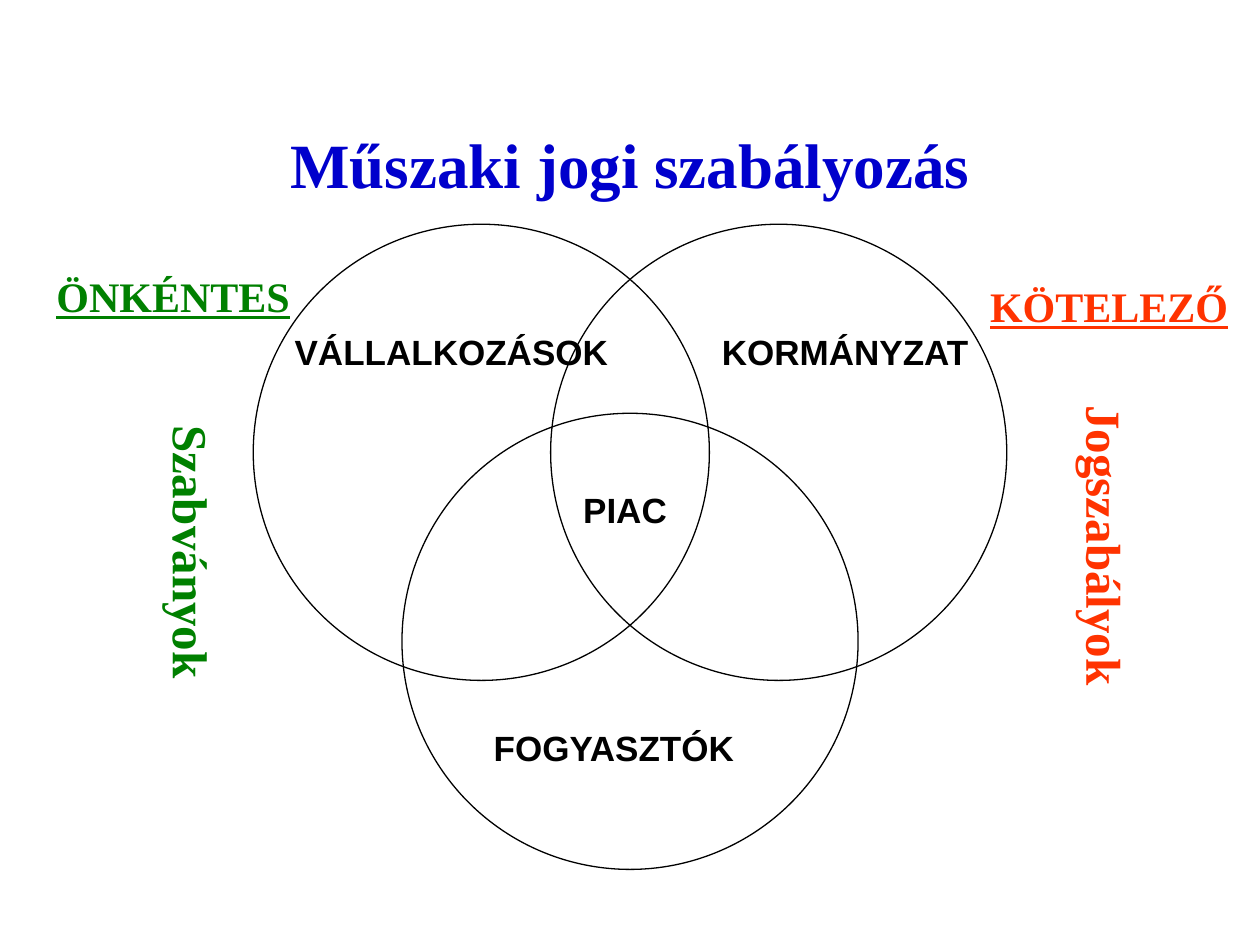
from dataclasses import dataclass

from pptx import Presentation
from pptx.dml.color import RGBColor
from pptx.enum.shapes import MSO_SHAPE as Shape
from pptx.enum.text import MSO_ANCHOR as Anchor, MSO_AUTO_SIZE as AutoSize, PP_ALIGN as Align
from pptx.util import Inches, Pt


@dataclass(frozen=True)
class Theme:
    """Colours, fonts and type sizes of the slide."""
    title_color: str = "0000CC"
    ink: str = "000000"
    voluntary: str = "008000"
    mandatory: str = "FF3300"
    serif: str = "Times New Roman"
    sans: str = "Arial"
    title_size: int = 36
    side_size: int = 28
    heading_size: int = 24
    label_size: int = 20
    line_width: float = 0.75


class SlideBuilder:
    """Draws styled elements on the current slide."""

    def __init__(self, slide, theme):
        self.slide = slide
        self.theme = theme

    def place(self, shape, left, top, width, height):
        shape.left, shape.top = Inches(left), Inches(top)
        shape.width, shape.height = Inches(width), Inches(height)

    def set_text(self, shape, text, name, size, color):
        paragraph = shape.text_frame.paragraphs[0]
        paragraph.text = text
        font = paragraph.font
        font.name, font.size, font.bold = name, Pt(size), True
        font.color.rgb = RGBColor.from_string(color)
        return paragraph

    def title(self, text, *box):
        shape = self.slide.shapes.title
        self.place(shape, *box)
        shape.text_frame.vertical_anchor = Anchor.MIDDLE
        paragraph = self.set_text(shape, text, self.theme.serif, self.theme.title_size,
                                  self.theme.title_color)
        paragraph.alignment = Align.CENTER

    def circle(self, left, top, diameter):
        size = Inches(diameter)
        shape = self.slide.shapes.add_shape(Shape.OVAL, Inches(left), Inches(top), size, size)
        shape.shadow.inherit = False
        shape.fill.background()
        shape.line.color.rgb = RGBColor.from_string(self.theme.ink)
        shape.line.width = Pt(self.theme.line_width)

    def text(self, text, box, name, size, color):
        shape = self.slide.shapes.add_textbox(*map(Inches, box))
        shape.text_frame.word_wrap = True
        shape.text_frame.auto_size = AutoSize.SHAPE_TO_FIT_TEXT
        self.set_text(shape, text, name, size, color)
        return shape

    def label(self, text, left, top, width):
        self.text(text, (left, top, width, 0.43), self.theme.sans,
                  self.theme.label_size, self.theme.ink)

    def side_text(self, text, left, top, height, color):
        shape = self.text(text, (left, top, 0.67, height), self.theme.serif,
                          self.theme.side_size, color)
        shape.text_frame._txBody.bodyPr.set("vert", "eaVert")

    def heading(self, text, left, top, width, color):
        shape = self.text(text, (left, top, width, 0.5), self.theme.serif,
                          self.theme.heading_size, color)
        shape.text_frame.paragraphs[0].font.underline = True


def main():
    presentation = Presentation()
    presentation.slide_width, presentation.slide_height = Inches(10), Inches(7.5)
    theme = Theme()
    slide = presentation.slides.add_slide(presentation.slide_layouts[5])
    builder = SlideBuilder(slide, theme)

    builder.title("Műszaki jogi szabályozás", 0.75, 0.67, 8.5, 1.25)
    for left, top in ((2.01, 1.78), (4.37, 1.78), (3.19, 3.28)):
        builder.circle(left, top, 3.62)
    for text, left, top, width in (
        ("VÁLLALKOZÁSOK", 2.24, 2.57, 2.76),
        ("KORMÁNYZAT", 5.63, 2.57, 2.28),
        ("FOGYASZTÓK", 3.82, 5.72, 2.28),
        ("PIAC", 4.53, 3.83, 0.95),
    ):
        builder.label(text, left, top, width)
    builder.side_text("Jogszabályok", 8.39, 3.12, 2.76, theme.mandatory)
    builder.side_text("Szabványok", 1.14, 3.28, 2.36, theme.voluntary)
    builder.heading("ÖNKÉNTES", 0.35, 2.1, 2.13, theme.voluntary)
    builder.heading("KÖTELEZŐ", 7.76, 2.18, 2.24, theme.mandatory)
    presentation.save("out.pptx")


if __name__ == "__main__":
    main()
